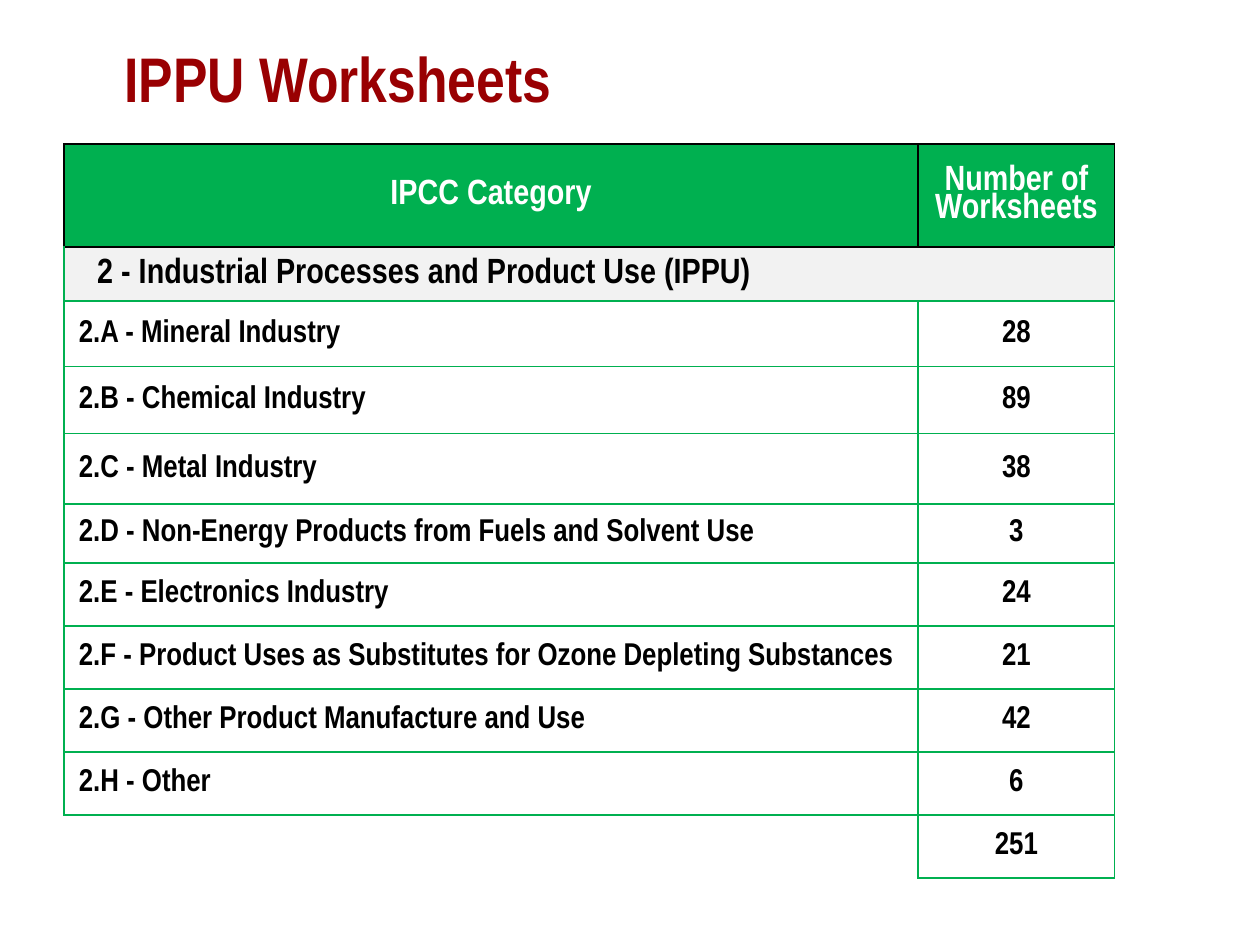
from lxml.etree import SubElement
from pptx import Presentation
from pptx.dml.color import RGBColor
from pptx.enum.text import MSO_ANCHOR, PP_ALIGN
from pptx.oxml.ns import qn
from pptx.util import Cm, Pt

COLORS = {
    "title": "990002",
    "green": "00B050",
    "band": "F2F2F2",
    "black": "000000",
    "white": "FFFFFF",
}
COLUMN_WIDTHS = [17.22, 3.96]
ROW_HEIGHTS = [2.08, 1.09, 1.32, 1.35, 1.42, 1.19] + [1.27] * 5
HEADERS = ["IPCC Category", "Number of Worksheets"]
SECTION = "2 - Industrial Processes and Product Use (IPPU)"
CATEGORIES = [
    ("2.A - Mineral Industry", 28),
    ("2.B - Chemical Industry", 89),
    ("2.C - Metal Industry", 38),
    ("2.D - Non-Energy Products from Fuels and Solvent Use", 3),
    ("2.E - Electronics Industry", 24),
    ("2.F - Product Uses as Substitutes for Ozone Depleting Substances", 21),
    ("2.G - Other Product Manufacture and Use", 42),
    ("2.H - Other", 6),
]


class SlideBuilder:
    font_name = "Arial Narrow"
    line_spacing = 0.85

    def __init__(self, slide):
        self.slide = slide

    def add_run(self, paragraph, text, size, color):
        run = paragraph.add_run()
        run.text = text
        run.font.name = self.font_name
        run.font.size = Pt(size)
        run.font.bold = True
        run.font.color.rgb = RGBColor.from_string(COLORS[color])

    def title(self, text, left, top, width, height):
        frame = self.slide.shapes.add_textbox(
            Cm(left), Cm(top), Cm(width), Cm(height)).text_frame
        frame.word_wrap = True
        frame.vertical_anchor = MSO_ANCHOR.MIDDLE
        self.add_run(frame.paragraphs[0], text, 36, "title")

    def table(self, left, top, widths, heights):
        table = self.slide.shapes.add_table(
            len(heights), len(widths), Cm(left), Cm(top),
            Cm(sum(widths)), Cm(sum(heights))).table
        table.first_row = False
        table.horz_banding = False
        for column, width in zip(table.columns, widths):
            column.width = Cm(width)
        for row, height in zip(table.rows, heights):
            row.height = Cm(height)
        return table

    def borders(self, cell, left="green", right="green", top="green", bottom="green"):
        """Draw the four 1 pt edges; None hides an edge. Call before setting the fill."""
        properties = cell._tc.get_or_add_tcPr()
        edges = {"a:lnL": left, "a:lnR": right, "a:lnT": top, "a:lnB": bottom}
        for tag, color in edges.items():
            line = SubElement(properties, qn(tag), w=str(Pt(1)))
            if color is None:
                SubElement(line, qn("a:noFill"))
            else:
                fill = SubElement(line, qn("a:solidFill"))
                SubElement(fill, qn("a:srgbClr"), val=COLORS[color])

    def cell(self, cell, text="", size=18, color="black", fill=None,
             indent=None, **edges):
        """Fill in one cell; text is centred unless an indent in cm is given."""
        self.borders(cell, **edges)
        if fill is None:
            cell.fill.background()
        else:
            cell.fill.solid()
            cell.fill.fore_color.rgb = RGBColor.from_string(COLORS[fill])
        cell.vertical_anchor = MSO_ANCHOR.MIDDLE
        cell.margin_left = Cm(0.03 if indent is None else indent)
        cell.margin_right = cell.margin_top = Cm(0.03)
        cell.margin_bottom = Cm(0)
        if text:
            paragraph = cell.text_frame.paragraphs[0]
            paragraph.alignment = PP_ALIGN.CENTER if indent is None else PP_ALIGN.LEFT
            paragraph.line_spacing = self.line_spacing
            self.add_run(paragraph, text, size, color)


def main():
    presentation = Presentation()
    presentation.slide_width = Cm(25.4)
    presentation.slide_height = Cm(19.05)
    builder = SlideBuilder(presentation.slides.add_slide(presentation.slide_layouts[6]))

    builder.title("IPPU Worksheets", 2.26, 0.43, 21.5, 2.26)
    worksheets = builder.table(1.29, 2.9, COLUMN_WIDTHS, ROW_HEIGHTS)

    black_edges = dict.fromkeys(["left", "right", "top", "bottom"], "black")
    for column, header in enumerate(HEADERS):
        builder.cell(worksheets.cell(0, column), header, 20, "white", "green",
                     **black_edges)

    section_start, section_end = worksheets.cell(1, 0), worksheets.cell(1, 1)
    section_start.merge(section_end)
    builder.cell(section_start, SECTION, 20, fill="band", indent=0.67, top="black")
    builder.cell(section_end, fill="band", top="black")

    for row, (category, count) in enumerate(CATEGORIES, start=2):
        builder.cell(worksheets.cell(row, 0), category, indent=0.3)
        builder.cell(worksheets.cell(row, 1), str(count))

    total_row = len(ROW_HEIGHTS) - 1
    total = sum(count for _, count in CATEGORIES)
    builder.cell(worksheets.cell(total_row, 0), left=None, bottom=None)
    builder.cell(worksheets.cell(total_row, 1), str(total))

    presentation.save("out.pptx")


if __name__ == "__main__":
    main()
